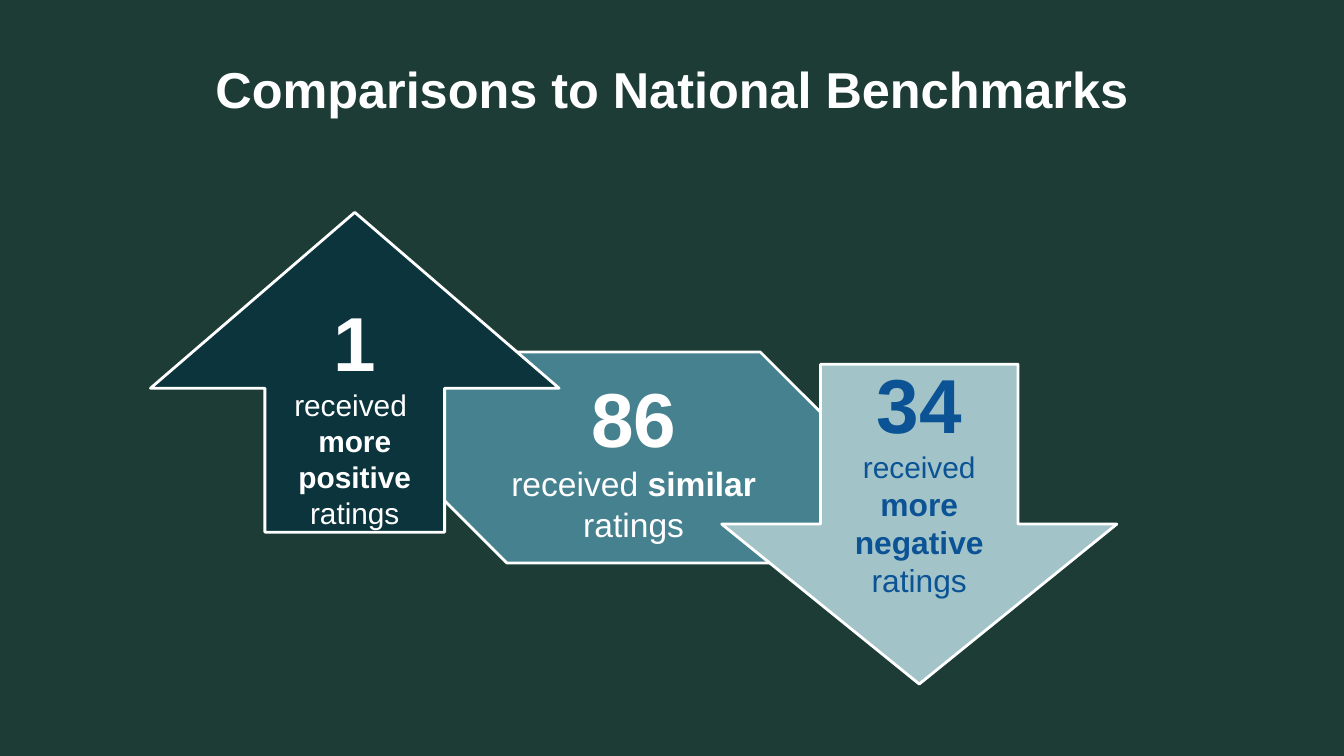
from copy import deepcopy

from pptx import Presentation, util as u
from pptx.dml import color
from pptx.enum import shapes, text

KIND = shapes.MSO_SHAPE
MID = text.MSO_ANCHOR.MIDDLE
WHITE = "FFFFFF"


def rgb(code):
    """Return the colour of a hex string."""
    return color.RGBColor.from_string(code)


def style(run, size, bold, tint):
    """Format one run."""
    font = run.font
    font.name, font.size, font.bold = "Arial", u.Pt(size), bold
    font.color.rgb = rgb(tint)


def add_line(para, parts, tint, gap=1.0):
    """Fill a centred paragraph with (words, size, bold) parts, breaking at each \\v."""
    para.alignment = text.PP_ALIGN.CENTER
    para.line_spacing = gap
    for words, size, bold in parts:
        for i, chunk in enumerate(words.split("\v")):
            if i:
                para.add_line_break()
                props = para.runs[-1].font._element
                para._p[-1].append(deepcopy(props))
            if chunk:
                run = para.add_run()
                run.text = chunk
                style(run, size, bold, tint)


def set_frame(frame, anchor, side, edge):
    """Set wrapping, anchor and margins of a text frame."""
    frame.word_wrap = True
    frame.vertical_anchor = anchor
    frame.margin_left = frame.margin_right = u.Inches(side)
    frame.margin_top = frame.margin_bottom = u.Inches(edge)


def add_title(slide, words):
    """Add the slide heading."""
    box = slide.shapes.add_textbox(0, u.Inches(0.23), u.Inches(10), u.Inches(0.91))
    set_frame(box.text_frame, MID, 0.07, 0.04)
    add_line(box.text_frame.paragraphs[0], [(words, 27, True)], WHITE, 0.9)


def add_count(slide, kind, place, bends, fill, tint, anchor, edge, count, parts):
    """Add an outlined shape with a large count above its label."""
    shape = slide.shapes.add_shape(kind, *map(u.Inches, place))
    for i, bend in enumerate(bends):
        shape.adjustments[i] = bend
    shape.shadow.inherit = False
    shape.fill.solid()
    shape.fill.fore_color.rgb = rgb(fill)
    shape.line.color.rgb = rgb(WHITE)
    shape.line.width = u.Pt(1.5)
    frame = shape.text_frame
    set_frame(frame, anchor, 0, edge)
    add_line(frame.paragraphs[0], [(count, 41, True)], tint)
    add_line(frame.add_paragraph(), parts, tint)


def main():
    """Build and save the slide."""
    deck = Presentation()
    deck.slide_width = u.Inches(10)
    deck.slide_height = u.Inches(10 * 9 / 16)
    slide = deck.slides.add_slide(deck.slide_layouts[6])
    slide.background.fill.solid()
    slide.background.fill.fore_color.rgb = rgb("1C3C35")
    add_title(slide, "Comparisons to National Benchmarks")
    add_count(slide, KIND.SNIP_2_DIAG_RECTANGLE, (3.16, 2.62, 3.11, 1.57), (0, 0.39),
              "45818E", WHITE, MID, 0, "86",
              [("received ", 18, False), ("similar\v", 18, True), ("ratings", 18, False)])
    add_count(slide, KIND.UP_ARROW, (1.12, 1.58, 3.04, 2.38), (0.44, 0.55),
              "0C343D", WHITE, text.MSO_ANCHOR.TOP, 0.04, "1",
              [("received \v", 16, False), ("more positive\v", 16, True),
               ("ratings", 16, False)])
    add_count(slide, KIND.DOWN_ARROW, (5.37, 2.71, 2.94, 2.38), (0.5, 0.5),
              "A2C4C9", "0B5394", text.MSO_ANCHOR.BOTTOM, 0.04, "34",
              [("received ", 16, False), ("more negative ", 17, True),
               ("ratings", 17, False)])
    deck.save("out.pptx")


if __name__ == "__main__":
    main()
